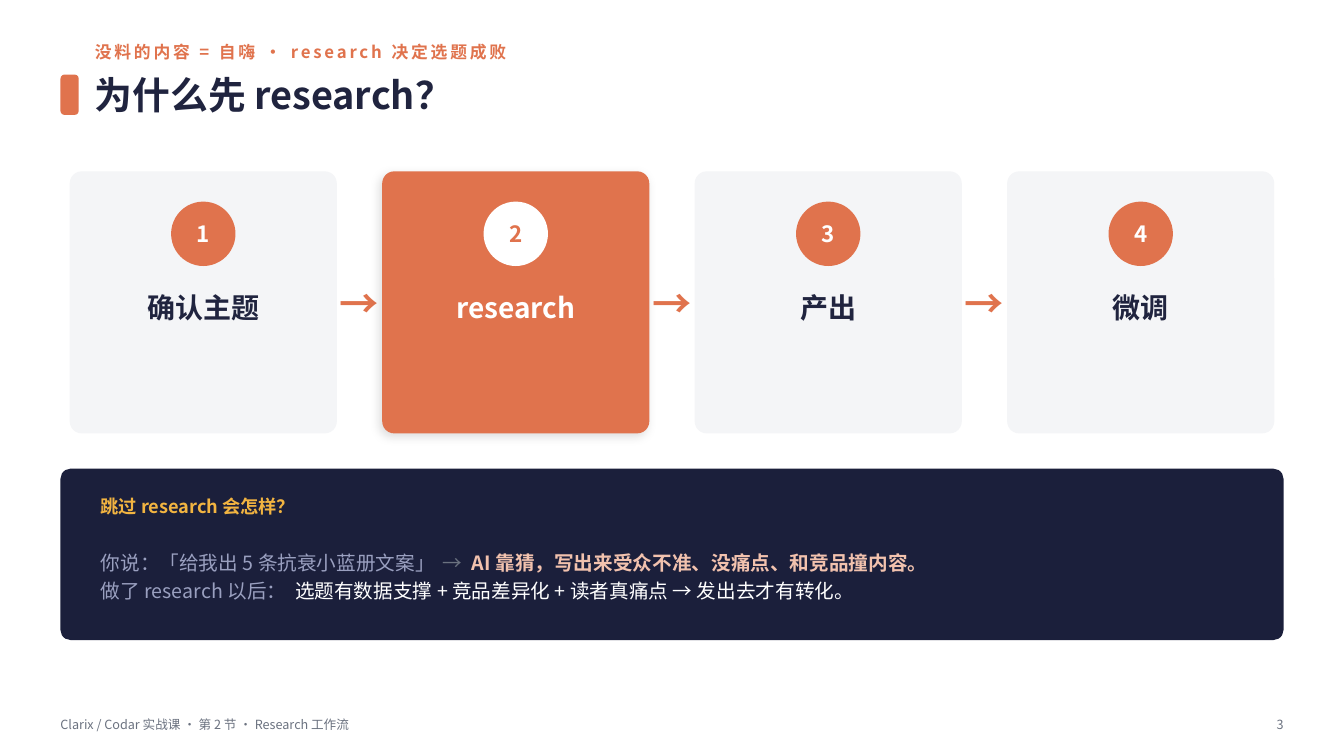
from lxml.etree import SubElement
from pptx import Presentation
from pptx.dml.color import RGBColor
from pptx.enum.shapes import MSO_SHAPE as SHAPE
from pptx.enum.text import MSO_ANCHOR as ANCHOR, PP_ALIGN as ALIGN
from pptx.oxml import parse_xml
from pptx.oxml.ns import nsdecls, qn
from pptx.util import Pt

FONT = "Noto Sans CJK SC"
ORANGE = RGBColor(0xE0, 0x73, 0x4D)
INK = RGBColor(0x20, 0x24, 0x3F)
NAVY = RGBColor(0x1B, 0x1F, 0x3B)
PALE = RGBColor(0xF4, 0xF5, 0xF7)
WHITE = RGBColor(0xFF, 0xFF, 0xFF)
GOLD = RGBColor(0xF2, 0xB4, 0x41)
LAVENDER = RGBColor(0x9A, 0xA0, 0xC0)
PEACH = RGBColor(0xF2, 0xC2, 0xAE)
GRAY = RGBColor(0x6B, 0x72, 0x80)

KICKER = "没料的内容 = 自嗨 · research 决定选题成败"
TITLE = "为什么先 research？"
STEPS = ["确认主题", "research", "产出", "微调"]
CURRENT = 2
QUESTION = "跳过 research 会怎样？"
# Each run: text, colour, bold, letter spacing in points
ANSWERS = [
    [("你说：「给我出 5 条抗衰小蓝册文案」", LAVENDER, False, 0),
     (" → ", GRAY, False, 2),
     ("AI 靠猜，写出来受众不准、没痛点、和竞品撞内容。", PEACH, True, 0)],
    [("做了 research 以后：", LAVENDER, False, 0),
     (" ", WHITE, False, 3),
     ("选题有数据支撑 + 竞品差异化 + 读者真痛点 → 发出去才有转化。", WHITE, False, 0)],
]
FOOTER = "Clarix / Codar 实战课 · 第 2 节 · Research 工作流"
PAGE = "3"

SLIDE_W, SLIDE_H = 960, 540
MARGIN = 43.2
BAND_W = SLIDE_W - 2 * MARGIN
HEAD_X = 67.7
CARD_W, CARD_H, CARD_Y, GAP = 190.8, 187.2, 122.4, 32.4
BADGE = 46
LABEL_INSET = 7.2

prs = Presentation()
prs.slide_width, prs.slide_height = Pt(SLIDE_W), Pt(SLIDE_H)
s = prs.slides.add_slide(prs.slide_layouts[6])


def style(r, size, color, bold=False, spacing=0):
    r.font.size, r.font.bold, r.font.name = Pt(size), bold, FONT
    r.font.color.rgb = color
    rPr = r.font._element
    SubElement(rPr, qn("a:ea")).set("typeface", FONT)
    if spacing:
        rPr.set("spc", str(spacing * 100))


def frame(sp):
    """Give a shape's text no insets and middle anchoring."""
    tf = sp.text_frame
    tf.margin_left = tf.margin_top = tf.margin_right = tf.margin_bottom = 0
    tf.vertical_anchor = ANCHOR.MIDDLE
    tf.word_wrap = True
    return tf


def write(sp, text, size, color, bold=False, align=ALIGN.LEFT, spacing=0):
    p = frame(sp).paragraphs[0]
    p.text, p.alignment = text, align
    style(p.runs[0], size, color, bold, spacing)


def box(x, y, w, h):
    return s.shapes.add_textbox(Pt(x), Pt(y), Pt(w), Pt(h))


def block(kind, x, y, w, h, fill, radius=None):
    sp = s.shapes.add_shape(kind, Pt(x), Pt(y), Pt(w), Pt(h))
    sp.shadow.inherit = False
    sp.fill.solid()
    sp.fill.fore_color.rgb = fill
    sp.line.fill.background()
    if radius:
        sp.adjustments[0] = radius / min(w, h)
    return sp


def lift(sp):
    """Add a soft drop shadow."""
    effects = sp._element.spPr.find(qn("a:effectLst"))
    effects.append(parse_xml(
        f'<a:outerShdw {nsdecls("a")} blurRad="{Pt(7)}" dist="{Pt(3)}" '
        f'dir="{135 * 60000}" rotWithShape="0"><a:srgbClr val="000000">'
        '<a:alpha val="12000"/></a:srgbClr></a:outerShdw>'))


# Heading
write(box(HEAD_X, 25.9, 849, 21.6), KICKER, 12, ORANGE, True, spacing=2)
block(SHAPE.ROUNDED_RECTANGLE, MARGIN, 53.3, 13, 28.8, ORANGE, 2.88)
write(box(HEAD_X, 46.1, 849, 43.2), TITLE, 27, INK, True)

# Step cards
row_w = len(STEPS) * CARD_W + (len(STEPS) - 1) * GAP
row_x = (SLIDE_W - row_w) / 2
for i, step in enumerate(STEPS):
    x = row_x + i * (CARD_W + GAP)
    current = i + 1 == CURRENT
    card_fill, badge_fill = (ORANGE, WHITE) if current else (PALE, ORANGE)
    card = block(SHAPE.ROUNDED_RECTANGLE, x, CARD_Y, CARD_W, CARD_H, card_fill, 8.6)
    if current:
        lift(card)
    badge = block(SHAPE.OVAL, x + (CARD_W - BADGE) / 2, CARD_Y + 21.6,
                  BADGE, BADGE, badge_fill)
    write(badge, str(i + 1), 16, ORANGE if current else WHITE, True, ALIGN.CENTER)
    label = box(x + LABEL_INSET, CARD_Y + 79.2, CARD_W - 2 * LABEL_INSET, 36)
    write(label, step, 20, WHITE if current else INK, True, ALIGN.CENTER)
    if i < len(STEPS) - 1:
        arrow = box(x + CARD_W - 1.4, CARD_Y, GAP + 2.8, CARD_H)
        write(arrow, "→", 28, ORANGE, True, ALIGN.CENTER)

# Comparison panel
block(SHAPE.ROUNDED_RECTANGLE, MARGIN, 334.8, BAND_W, 122.4, NAVY, 7.2)
write(box(72, 349.2, 792, 25.2), QUESTION, 13, GOLD, True)
tf = frame(box(72, 378, 816, 64.8))
for i, answer in enumerate(ANSWERS):
    p = tf.add_paragraph() if i else tf.paragraphs[0]
    p.line_spacing = 1.2
    for text, color, bold, spacing in answer:
        r = p.add_run()
        r.text = text
        style(r, 14, color, bold, spacing)

# Footer
write(box(MARGIN, 506.9, 648, 21.6), FOOTER, 9, GRAY)
write(box(SLIDE_W - MARGIN - 50.4, 506.9, 50.4, 21.6), PAGE, 9, GRAY, align=ALIGN.RIGHT)

prs.save("out.pptx")
